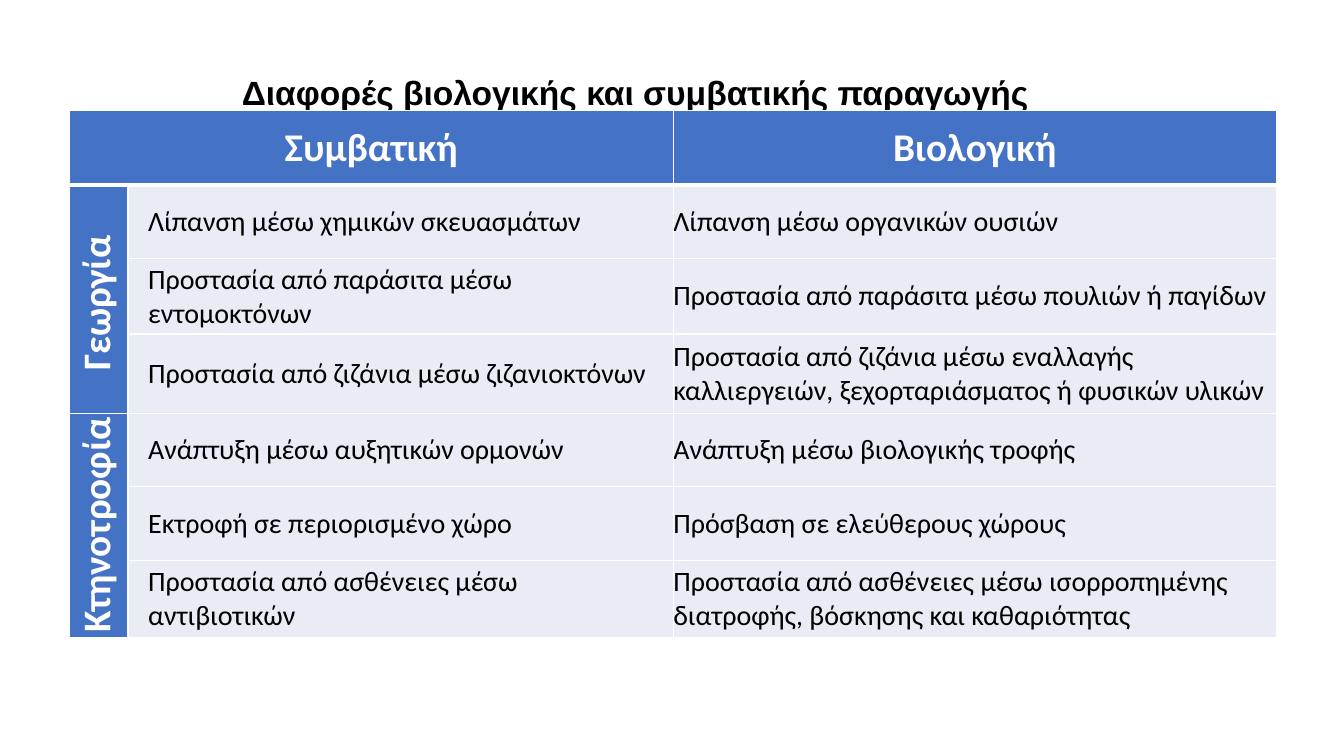
"""Build a slide comparing conventional and organic production."""
from lxml import etree
from pptx import Presentation
from pptx.dml.color import RGBColor
from pptx.enum.text import MSO_ANCHOR, PP_ALIGN
from pptx.oxml.ns import qn
from pptx.util import Pt

MIDDLE = MSO_ANCHOR.MIDDLE
CENTER, LEFT = PP_ALIGN.CENTER, PP_ALIGN.LEFT

TITLE = "Διαφορές βιολογικής και συμβατικής παραγωγής"
HEADINGS = ("Συμβατική", "Βιολογική")
SECTIONS = [
    ("Γεωργία ", [
        ("Λίπανση μέσω χημικών σκευασμάτων", "Λίπανση μέσω οργανικών ουσιών"),
        ("Προστασία από παράσιτα μέσω εντομοκτόνων",
         "Προστασία από παράσιτα μέσω πουλιών ή παγίδων"),
        ("Προστασία από ζιζάνια μέσω ζιζανιοκτόνων",
         "Προστασία από ζιζάνια μέσω εναλλαγής καλλιεργειών, "
         "ξεχορταριάσματος ή φυσικών υλικών"),
    ]),
    ("Κτηνοτροφία", [
        ("Ανάπτυξη μέσω αυξητικών ορμονών", "Ανάπτυξη μέσω βιολογικής τροφής"),
        ("Εκτροφή σε περιορισμένο χώρο", "Πρόσβαση σε ελεύθερους χώρους"),
        ("Προστασία από ασθένειες μέσω αντιβιοτικών",
         "Προστασία από ασθένειες μέσω ισορροπημένης διατροφής, "
         "βόσκησης και καθαριότητας"),
    ]),
]

THEME = {
    "title_font": "Arial", "table_font": "Calibri",
    "title_size": 24, "heading_size": 28, "body_size": 20,
    "black": "000000", "white": "FFFFFF", "accent": "4472C4", "band": "E9EBF5",
}
SLIDE_SIZE = (960, 540)
TITLE_BOX = (165.6, 33.1, 680.4, 45.4)
TABLE_ORIGIN = (49.3, 79.2)
COLUMN_WIDTHS = (42.2, 389.5, 430.6)
ROW_HEIGHTS = (52.7, 52.7, 52.7, 56.5, 52.7, 52.7, 54)
CELL_PAD, CONVENTIONAL_PAD, ORGANIC_PAD = 3, 14.4, 0
THIN, THICK = 1, 3


def write(para, words, font, size, color, bold):
    span = para.add_run()
    span.text = words
    span.font.name = font
    span.font.size = Pt(size)
    span.font.bold = bold
    span.font.color.rgb = RGBColor.from_string(color)


def set_borders(cell, bottom):
    properties = cell._tc.get_or_add_tcPr()
    sides = (("a:lnL", THIN), ("a:lnR", THIN), ("a:lnT", THIN), ("a:lnB", bottom))
    for position, (side, width) in enumerate(sides):
        line = etree.Element(qn(side), w=str(Pt(width)))
        fill = etree.SubElement(line, qn("a:solidFill"))
        etree.SubElement(fill, qn("a:srgbClr"), val=THEME["white"])
        properties.insert(position, line)


def fill_cell(cell, words, heading=False, pad=CELL_PAD):
    cell.fill.solid()
    cell.fill.fore_color.rgb = RGBColor.from_string(THEME["accent" if heading else "band"])
    cell.vertical_anchor = MIDDLE
    cell.margin_left = cell.margin_right = Pt(pad)
    cell.margin_top = cell.margin_bottom = Pt(CELL_PAD)
    para = cell.text_frame.paragraphs[0]
    para.alignment = CENTER if heading else LEFT
    size = THEME["heading_size" if heading else "body_size"]
    color = THEME["white" if heading else "black"]
    write(para, words, THEME["table_font"], size, color, heading)


def add_title(page):
    box = page.shapes.add_textbox(*map(Pt, TITLE_BOX))
    box.text_frame.word_wrap = True
    para = box.text_frame.paragraphs[0]
    para.line_spacing = 1.5
    write(para, TITLE, THEME["title_font"], THEME["title_size"], THEME["black"], True)


def add_comparison(page):
    size = (sum(COLUMN_WIDTHS), sum(ROW_HEIGHTS))
    frame = page.shapes.add_table(len(ROW_HEIGHTS), len(COLUMN_WIDTHS),
                                  *map(Pt, TABLE_ORIGIN + size))
    table = frame.table
    for column, width in zip(table.columns, COLUMN_WIDTHS):
        column.width = Pt(width)
    for row, height in zip(table.rows, ROW_HEIGHTS):
        row.height = Pt(height)

    table.cell(0, 0).merge(table.cell(0, 1))
    for column, heading in zip((0, 2), HEADINGS):
        fill_cell(table.cell(0, column), heading, heading=True)

    top = 1
    for name, differences in SECTIONS:
        label = table.cell(top, 0)
        label.merge(table.cell(top + len(differences) - 1, 0))
        fill_cell(label, name, heading=True)
        label._tc.get_or_add_tcPr().set("vert", "vert270")
        for row, (conventional, organic) in enumerate(differences, top):
            fill_cell(table.cell(row, 1), conventional, pad=CONVENTIONAL_PAD)
            fill_cell(table.cell(row, 2), organic, pad=ORGANIC_PAD)
        top += len(differences)

    for row in range(len(ROW_HEIGHTS)):
        for column in range(len(COLUMN_WIDTHS)):
            set_borders(table.cell(row, column), THIN if row else THICK)


def main():
    deck = Presentation()
    deck.slide_width, deck.slide_height = map(Pt, SLIDE_SIZE)
    page = deck.slides.add_slide(deck.slide_layouts[6])
    add_title(page)
    add_comparison(page)
    deck.save("out.pptx")


if __name__ == "__main__":
    main()
